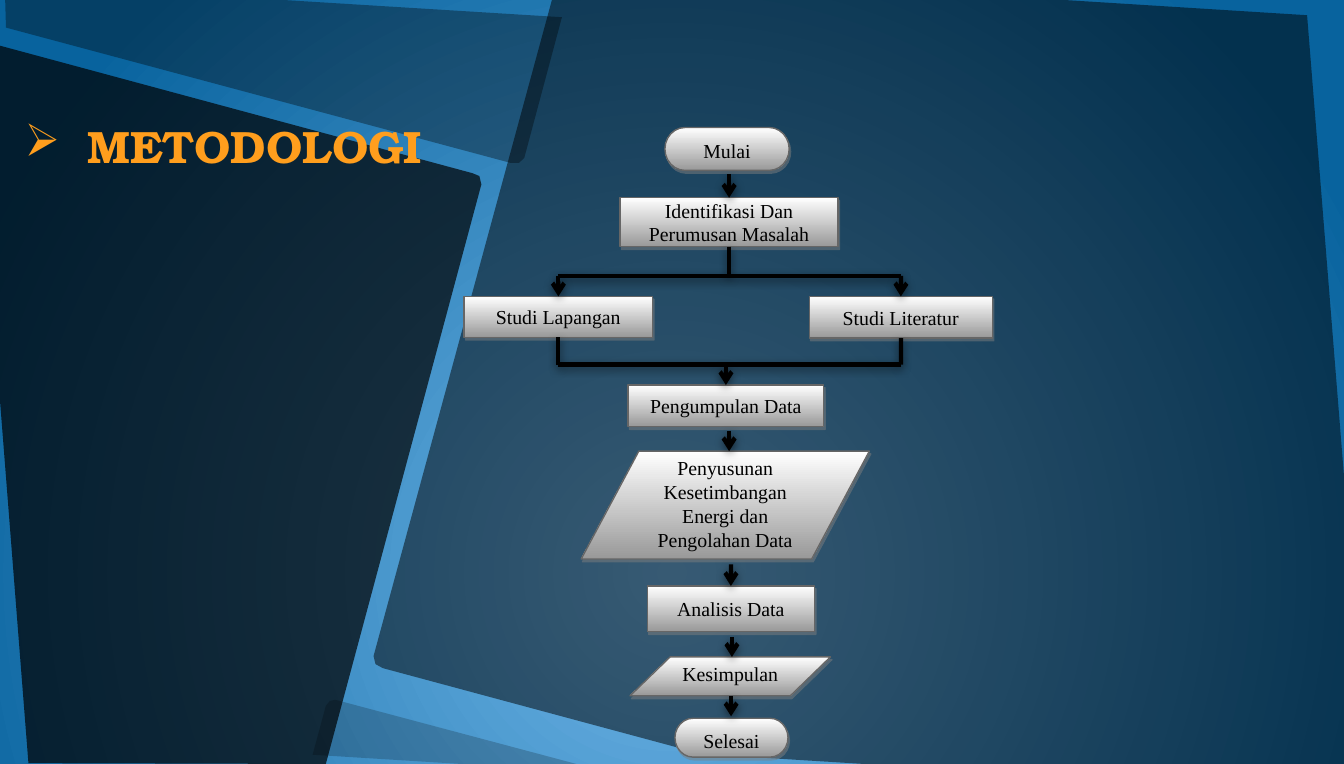
from lxml import etree
from pptx import Presentation
from pptx.dml.color import RGBColor
from pptx.enum.shapes import MSO_CONNECTOR, MSO_SHAPE as SHAPE
from pptx.enum.text import MSO_ANCHOR as ANCHOR, PP_ALIGN as ALIGN
from pptx.oxml.ns import qn
from pptx.util import Cm, Pt


def color(hex_value):
    return RGBColor.from_string(hex_value)


def add_xml(parent, tag, **attrs):
    child = etree.SubElement(parent, qn(tag))
    for name, value in attrs.items():
        child.set(name, str(value))
    return child


prs = Presentation()
prs.slide_width, prs.slide_height = Cm(33.53), Cm(19.05)
s = prs.slides.add_slide(prs.slide_layouts[5])

# Background: radial blue gradient
fill = s.background.fill
fill.gradient()
for stop, shade in zip(fill.gradient_stops, ("70B6E8", "08639E")):
    stop.color.rgb = color(shade)
grad = s.background._cSld.find(".//" + qn("a:gradFill"))
grad.remove(grad.find(qn("a:lin")))
glow = add_xml(grad, "a:path", path="circle")
add_xml(glow, "a:fillToRect", l=50000, t=50000, r=50000, b=0)

# Dark translucent panels: opacity in percent, outline in cm
panels = [
    (70, [(0, 1.14), (11.79, 4.32), (11.96, 4.39), (12.01, 4.6),
          (8.13, 19.05), (0.71, 19.03), (0, 9.98)]),
    (35, [(0.13, 0), (7.06, 0), (14.02, 0.43), (13.08, 3.94),
          (12.95, 4.06), (12.73, 4.06), (0.15, 0.69)]),
    (20, [(8.36, 17.45), (8.48, 17.48), (14.38, 19.05), (11.51, 19.05),
          (7.8, 18.82), (8.13, 17.6), (8.23, 17.48)]),
    (50, [(13.77, 0), (26.54, 0), (32.61, 0.38), (33.53, 11.86),
          (33.53, 19.05), (21.56, 19.05), (17.5, 18.8), (9.55, 16.66),
          (9.37, 16.56), (9.32, 16.36)]),
]
for opacity, outline in panels:
    points = [(Cm(x), Cm(y)) for x, y in outline]
    builder = s.shapes.build_freeform(*points[0])
    builder.add_line_segments(points[1:])
    sp = builder.convert_to_shape()
    sp.shadow.inherit = False
    sp.line.fill.background()
    sp.fill.solid()
    sp.fill.fore_color.rgb = color("000000")
    add_xml(sp._element.spPr.find(".//" + qn("a:srgbClr")), "a:alpha", val=opacity * 1000)

# Title, in front of the panels
title = s.shapes.title
s.shapes._spTree.append(title._element)
title.left, title.top, title.width, title.height = Cm(0.36), Cm(2.74), Cm(24.08), Cm(1.7)
tf = title.text_frame
tf.vertical_anchor = ANCHOR.BOTTOM
p = tf.paragraphs[0]
p.alignment = ALIGN.JUSTIFY
pPr = p._p.get_or_add_pPr()
pPr.set("marL", str(Cm(1.57)))
pPr.set("indent", str(-Cm(1.57)))
add_xml(pPr, "a:buChar", char="➢")
r = p.add_run()
r.text = "METODOLOGI"
r.font.name, r.font.size, r.font.bold = "TeX Gyre Bonum", Pt(32), True
r.font.color.rgb = color("FF9E1D")

# Flowchart steps: text, shape, left, top, width, height in cm
steps = [
    ("Mulai", SHAPE.FLOWCHART_TERMINATOR, 16.59, 3.18, 3.1, 1.07),
    ("Identifikasi Dan Perumusan Masalah", SHAPE.RECTANGLE, 15.47, 4.93, 5.44, 1.22),
    ("Studi Lapangan", SHAPE.RECTANGLE, 11.58, 7.39, 4.7, 1.02),
    ("Studi Literatur", SHAPE.RECTANGLE, 20.19, 7.39, 4.57, 1.04),
    ("Pengumpulan Data", SHAPE.RECTANGLE, 15.67, 9.6, 4.88, 1.04),
    ("Penyusunan Kesetimbangan Energi dan Pengolahan Data", SHAPE.FLOWCHART_DATA,
     14.5, 11.25, 7.19, 2.69),
    ("Analisis Data", SHAPE.RECTANGLE, 16.15, 14.61, 4.17, 1.14),
    ("Kesimpulan", SHAPE.FLOWCHART_DATA, 15.72, 16.38, 5, 0.97),
    ("Selesai", SHAPE.FLOWCHART_TERMINATOR, 16.84, 17.91, 2.82, 0.97),
]
shadowed = []  # shape, shadow colour, blur, distance, direction
boxes = []
for text, kind, *box in steps:
    sp = s.shapes.add_shape(kind, *map(Cm, box))
    sp.fill.gradient()
    sp.fill.gradient_angle = 270
    for stop, shade in zip(sp.fill.gradient_stops, ("FFFFFF", "999999")):
        stop.color.rgb = color(shade)
    sp.line.color.rgb = color("666666")
    sp.line.width = Pt(1)
    tf = sp.text_frame
    tf.word_wrap = True
    tf.vertical_anchor = ANCHOR.MIDDLE if kind == SHAPE.RECTANGLE else ANCHOR.TOP
    p = tf.paragraphs[0]
    p.alignment = ALIGN.CENTER
    r = p.add_run()
    r.text = text
    r.font.name, r.font.size = "Times New Roman", Pt(14)
    r.font.color.rgb = color("000000")
    boxes.append(sp)
    shadowed.append((sp, "7F7F7F", 0, 2.2, 63))
start, problem, field, literature, collect, compose, analyse, conclude, end = boxes

# Connectors: x1, y1, x2, y2 in cm, arrowhead, box at begin, box at end
links = [
    (13.93, 6.88, 22.48, 6.88, False, None, None),
    (13.93, 8.41, 13.93, 9.09, False, field, None),
    (22.48, 8.43, 22.48, 9.09, False, literature, None),
    (13.93, 9.09, 22.48, 9.09, False, None, None),
    (18.19, 4.34, 18.19, 4.93, True, None, problem),
    (18.19, 6.15, 18.19, 6.88, False, problem, None),
    (13.93, 6.88, 13.93, 7.39, True, None, field),
    (22.48, 6.88, 22.48, 7.39, True, None, literature),
    (18.11, 9.09, 18.11, 9.6, True, None, collect),
    (18.19, 10.74, 18.19, 11.25, True, None, None),
    (18.24, 14.07, 18.24, 14.61, True, None, analyse),
    (18.26, 15.88, 18.26, 16.38, True, None, None),
    (18.24, 17.35, 18.24, 17.86, True, None, None),
]
for *ends, arrow, source, target in links:
    line = s.shapes.add_connector(MSO_CONNECTOR.STRAIGHT, *map(Cm, ends))
    if source:
        line.begin_connect(source, 2)
    if target:
        line.end_connect(target, 0)
    line.line.color.rgb = color("000000")
    line.line.width = Pt(3)
    if arrow:
        add_xml(line.line._get_or_add_ln(), "a:tailEnd", type="arrow")
    shadowed.append((line, "000000", 6, 2, 90))

# Half-transparent shadows
for sp, shade, blur, distance, direction in shadowed:
    effects = add_xml(sp._element.spPr, "a:effectLst")
    shadow = add_xml(effects, "a:outerShdw", blurRad=Pt(blur), dist=Pt(distance),
                     dir=direction * 60000, algn="ctr", rotWithShape=0)
    add_xml(add_xml(shadow, "a:srgbClr", val=shade), "a:alpha", val=50000)

prs.save("out.pptx")
